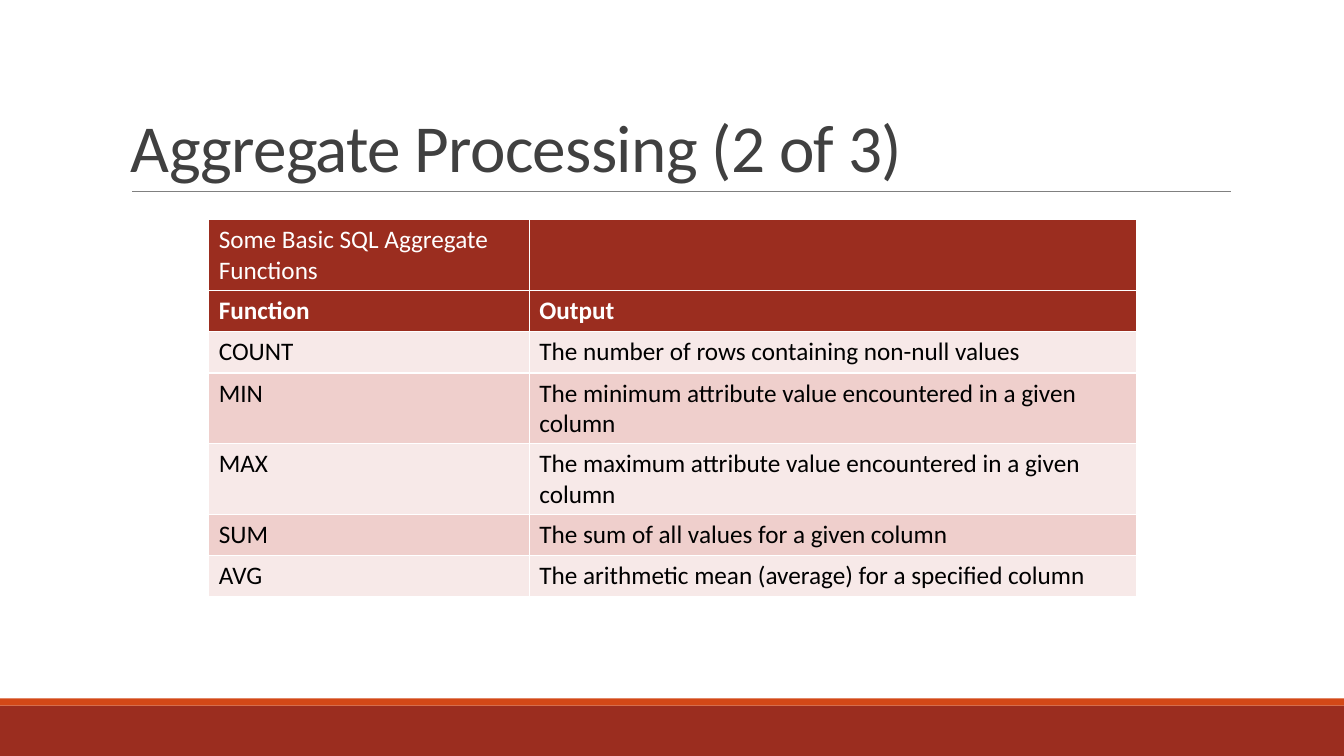
from lxml import etree
from pptx import Presentation
from pptx import util as u
from pptx.dml.color import RGBColor
from pptx.enum import shapes, text
from pptx.oxml import ns

TITLE = "Aggregate Processing (2 of 3)"
ROWS = [
    ("Some Basic SQL Aggregate Functions", ""),
    ("Function", "Output"),
    ("COUNT", "The number of rows containing non-null values"),
    ("MIN", "The minimum attribute value encountered in a given column"),
    ("MAX", "The maximum attribute value encountered in a given column"),
    ("SUM", "The sum of all values for a given column"),
    ("AVG", "The arithmetic mean (average) for a specified column"),
]
HEADER_ROWS = 2
COLUMN_WIDTHS = (3.18, 6.02)
ROW_HEIGHT = 0.41
TABLE_LEFT, TABLE_TOP = 2.07, 2.18
WIDTH, HEIGHT = 13.33, 7.5
FONT = "Calibri"

BRICK = RGBColor(0x9B, 0x2D, 0x1F)
ORANGE = RGBColor(0xD3, 0x48, 0x17)
GRAY = RGBColor(0x80, 0x80, 0x80)
CHARCOAL = RGBColor(0x40, 0x40, 0x40)
BLACK = RGBColor(0, 0, 0)
WHITE = RGBColor(0xFF, 0xFF, 0xFF)
BANDS = (RGBColor(0xF7, 0xE9, 0xE8), RGBColor(0xEF, 0xCF, 0xCC))


def style_run(r, size, color, bold=False):
    r.font.name = FONT
    r.font.size = u.Pt(size)
    r.font.color.rgb = color
    r.font.bold = bold


def add_band(s, top, height, color):
    sp = s.shapes.add_shape(shapes.MSO_SHAPE.RECTANGLE, 0, u.Inches(top),
                            u.Inches(WIDTH), u.Inches(height))
    sp.shadow.inherit = False
    sp.fill.solid()
    sp.fill.fore_color.rgb = color
    sp.line.fill.background()


def add_rule(s, left, right, y):
    line = s.shapes.add_connector(shapes.MSO_CONNECTOR.STRAIGHT, u.Inches(left),
                                  u.Inches(y), u.Inches(right), u.Inches(y))
    line.line.color.rgb = GRAY
    line.line.width = u.Pt(0.5)
    etree.SubElement(line._element.spPr, ns.qn("a:effectLst"))


def add_title(s):
    box = s.shapes.add_textbox(u.Inches(1.2), u.Inches(0.31), u.Inches(11), u.Inches(1.59))
    tf = box.text_frame
    tf.word_wrap = True
    tf.vertical_anchor = text.MSO_ANCHOR.BOTTOM
    tf.text = TITLE
    p = tf.paragraphs[0]
    p.line_spacing = 0.85
    r = p.runs[0]
    style_run(r, 48, CHARCOAL)
    r.font._element.set("spc", "-50")


def add_borders(cell):
    tc_pr = cell._tc.get_or_add_tcPr()
    for side in ("lnL", "lnR", "lnT", "lnB"):
        ln = etree.SubElement(tc_pr, ns.qn(f"a:{side}"), w=str(u.Pt(1)))
        fill = etree.SubElement(ln, ns.qn("a:solidFill"))
        etree.SubElement(fill, ns.qn("a:srgbClr"), val=str(WHITE))


def add_function_table(s):
    table = s.shapes.add_table(
        len(ROWS), len(COLUMN_WIDTHS), u.Inches(TABLE_LEFT), u.Inches(TABLE_TOP),
        u.Inches(sum(COLUMN_WIDTHS)), u.Inches(ROW_HEIGHT * len(ROWS))).table
    for column, width in zip(table.columns, COLUMN_WIDTHS):
        column.width = u.Inches(width)
    for i, row in enumerate(ROWS):
        header = i < HEADER_ROWS
        table.rows[i].height = u.Inches(ROW_HEIGHT)
        for j, words in enumerate(row):
            cell = table.cell(i, j)
            add_borders(cell)
            cell.fill.solid()
            cell.fill.fore_color.rgb = BRICK if header else BANDS[(i - HEADER_ROWS) % 2]
            cell.text_frame.text = words
            for r in cell.text_frame.paragraphs[0].runs:
                style_run(r, 18, WHITE if header else BLACK, bold=i == 1)


def main():
    prs = Presentation()
    prs.slide_width, prs.slide_height = u.Inches(WIDTH), u.Inches(HEIGHT)
    s = prs.slides.add_slide(prs.slide_layouts[6])
    add_band(s, 7, 0.5, BRICK)
    add_band(s, 6.93, 0.07, ORANGE)
    add_rule(s, 1.31, 12.21, 1.9)
    add_title(s)
    add_function_table(s)
    prs.save("out.pptx")


if __name__ == "__main__":
    main()
